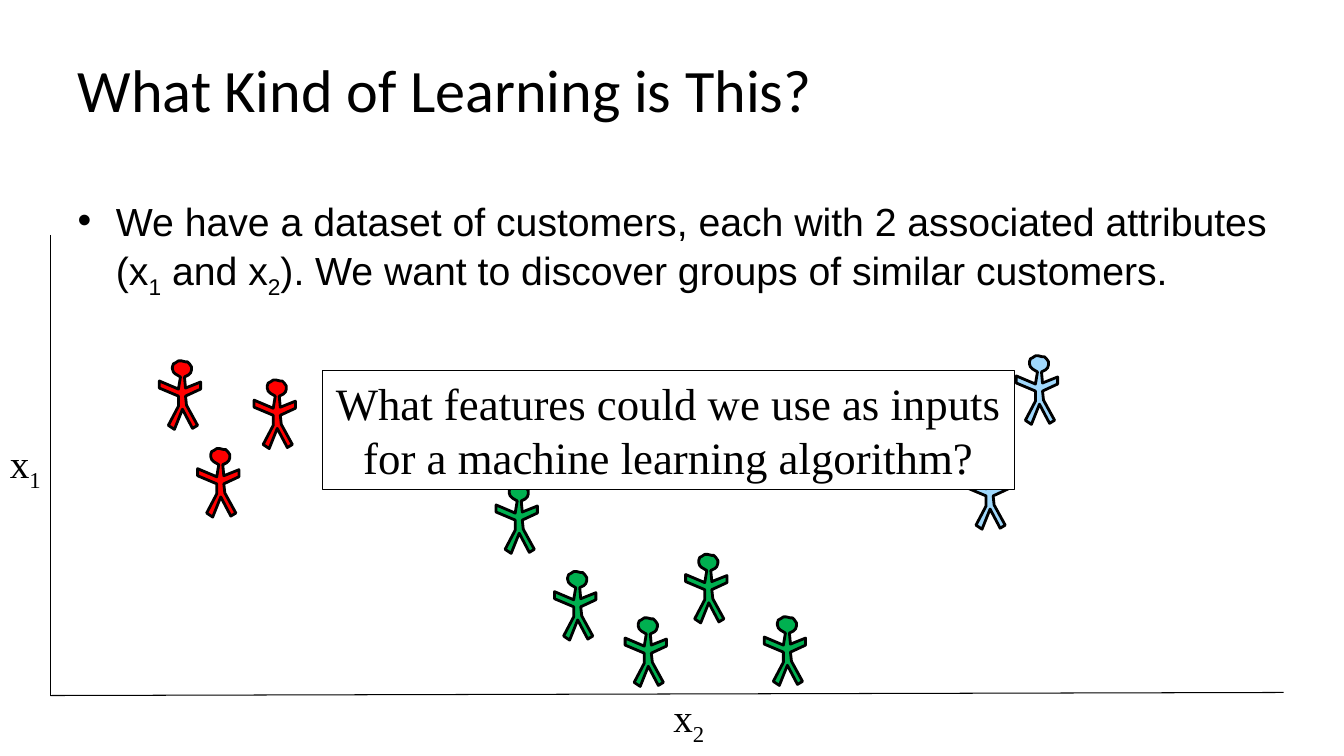
from pptx import Presentation
from pptx.dml.color import RGBColor
from pptx.enum.shapes import MSO_CONNECTOR, MSO_SHAPE
from pptx.enum.text import MSO_ANCHOR, MSO_AUTO_SIZE, PP_ALIGN
from pptx.oxml import parse_xml
from pptx.oxml.ns import nsdecls
from pptx.util import Inches, Pt

BLACK = RGBColor(0x00, 0x00, 0x00)
WHITE = RGBColor(0xFF, 0xFF, 0xFF)
RED = RGBColor(0xFF, 0x00, 0x00)
BLUE = RGBColor(0xA0, 0xD8, 0xFC)
GREEN = RGBColor(0x00, 0xB0, 0x50)

# Content: "_" before a piece marks a subscript, "\v" is a line break
TITLE = ["What Kind of Learning is This?"]
BODY = ["We have a dataset of customers, each with 2 associated attributes (x", "_1",
        " and x", "_2", "). We want to discover groups of similar customers."]
QUESTION = ["What features could we use as inputs", "\v",
            "for a machine learning algorithm?"]
AXIS_LABELS = [(["x", "_1"], (0, 4.31, 0.53, 0.57)),
               (["x", "_2"], (6.58, 6.83, 0.53, 0.57))]
ORIGIN = (0.5, 6.9)
AXIS_ENDS = [(0.5, 2.33), (12.73, 6.87)]

# Customers by group: left and top of each figure
CUSTOMERS = {
    RED: [(1.58, 3.58), (2.52, 3.77), (1.96, 4.45)],
    BLUE: [(10.08, 3.53), (9.59, 4.57)],
    GREEN: [(5.5, 5.67), (6.2, 6.13), (7.58, 6.12), (6.8, 5.5), (4.92, 4.81)],
}
# Outline of one figure, in hundredths of an inch
FIGURE = [(21, 16), (19, 28), (0, 20), (0, 27), (19, 35), (19, 45), (9, 64),
          (15, 68), (23, 48), (33, 67), (38, 64), (27, 44), (26, 35), (41, 28),
          (41, 21), (26, 27), (25, 16), (29, 14), (31, 12), (32, 9), (32, 6),
          (30, 3), (28, 1), (26, 1), (22, 0), (19, 0), (16, 2), (14, 3),
          (13, 6), (13, 8), (14, 11), (16, 13)]

TITLE_FONT = {"name": "Calibri", "size": Pt(43)}
BODY_FONT = {"name": "Arial", "size": Pt(28)}
LABEL_FONT = {"name": "Times New Roman", "size": Pt(28)}
QUESTION_FONT = {"name": "Times New Roman", "size": Pt(32)}


def place(sp, box):
    for side, value in zip(("left", "top", "width", "height"), box):
        setattr(sp, side, Inches(value))


def write(sp, pieces, font, align=PP_ALIGN.LEFT, anchor=MSO_ANCHOR.TOP, wrap=True):
    tf = sp.text_frame
    tf.auto_size = MSO_AUTO_SIZE.NONE
    tf.word_wrap = wrap
    tf.vertical_anchor = anchor
    p = tf.paragraphs[0]
    p.alignment = align
    for piece in pieces:
        if piece == "\v":
            p.add_line_break()
            continue
        r = p.add_run()
        r.text = piece.lstrip("_")
        for key, value in font.items():
            setattr(r.font, key, value)
        r.font.color.rgb = BLACK
        if piece.startswith("_"):
            r.font._element.set("baseline", "-25000")
    return p


def paint(sp, fill, width):
    sp.shadow.inherit = False
    sp.fill.solid()
    sp.fill.fore_color.rgb = fill
    sp.line.color.rgb = BLACK
    sp.line.width = Pt(width)


prs = Presentation()
prs.slide_width, prs.slide_height = Inches(13.33), Inches(7.5)
s = prs.slides.add_slide(prs.slide_layouts[1])

# Title and bullet
title, body = s.placeholders
place(title, (0.67, 0.25, 12.42, 1.25))
write(title, TITLE, TITLE_FONT, anchor=MSO_ANCHOR.MIDDLE)
place(body, (0.67, 1.88, 12.53, 4.95))
p = write(body, BODY, BODY_FONT)
p.line_spacing, p.space_before = 1.05, Pt(0)
pPr = p._p.get_or_add_pPr()
pPr.set("marL", str(Inches(0.38)))
pPr.set("indent", str(Inches(-0.38)))

# Axes and their labels
for end in AXIS_ENDS:
    axis = s.shapes.add_connector(MSO_CONNECTOR.STRAIGHT,
                                  *(Inches(v) for v in end + ORIGIN))
    axis.line.color.rgb = BLACK
    axis.line.width = Pt(0.75)
    axis._element.spPr.append(parse_xml(f"<a:effectLst {nsdecls('a')}/>"))
for pieces, box in AXIS_LABELS:
    label = s.shapes.add_textbox(*(Inches(v) for v in box))
    write(label, pieces, LABEL_FONT, wrap=False)

# Customers
for color, spots in CUSTOMERS.items():
    for left, top in spots:
        outline = s.shapes.build_freeform(*FIGURE[0], scale=Inches(0.01))
        outline.add_line_segments(FIGURE[1:], close=True)
        paint(outline.convert_to_shape(Inches(left), Inches(top)), color, 2)

# Question box
question = s.shapes.add_shape(MSO_SHAPE.RECTANGLE, 0, 0, 0, 0)
place(question, (3.2, 3.68, 6.86, 1.18))
paint(question, WHITE, 0.75)
write(question, QUESTION, QUESTION_FONT, PP_ALIGN.CENTER, wrap=False)

prs.save("out.pptx")
